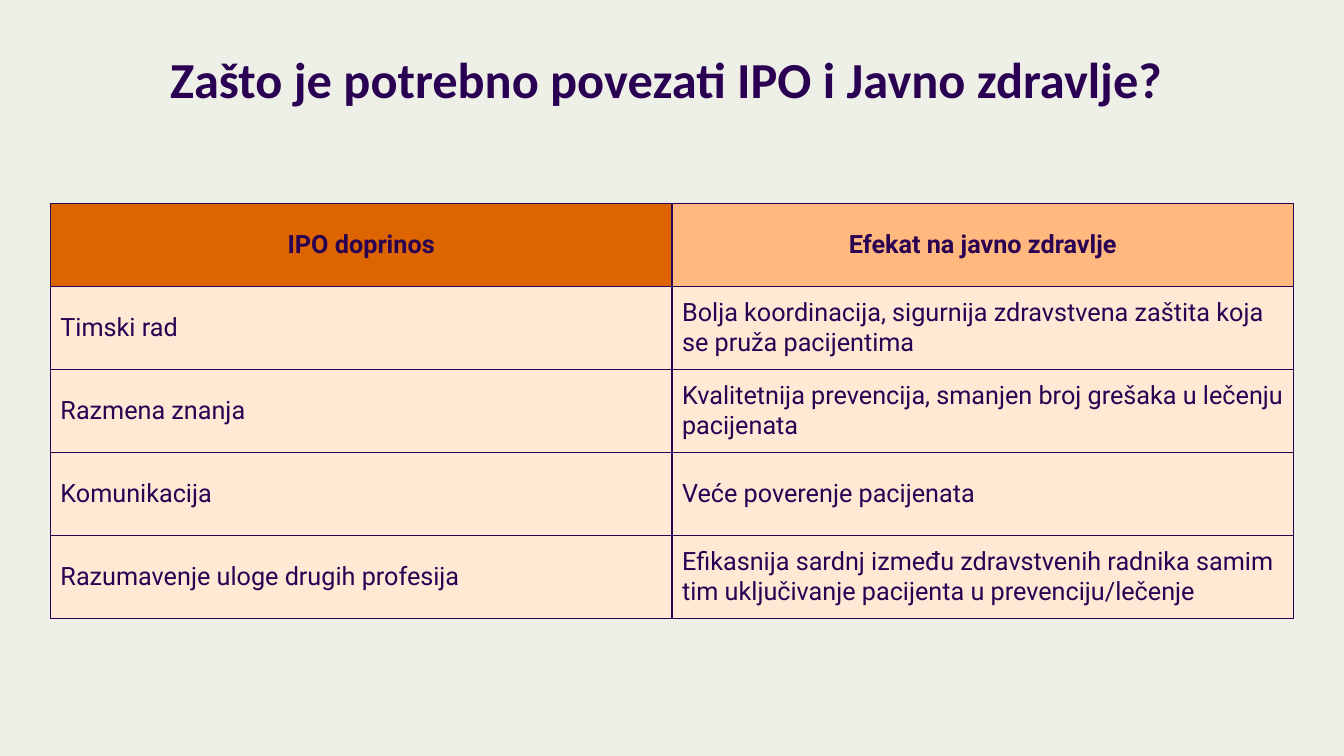
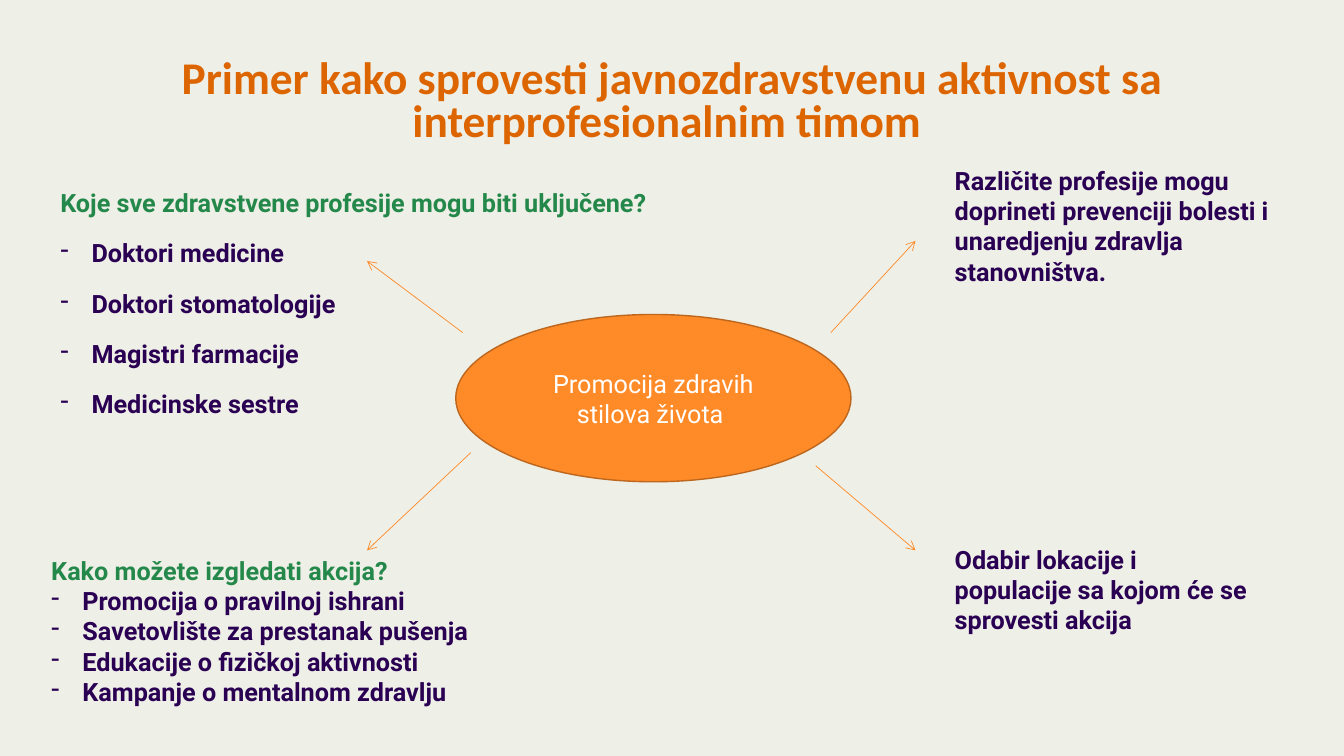
import pptx
import pptx.dml.color
import pptx.enum.shapes
import pptx.enum.text
import pptx.oxml
import pptx.oxml.ns
import pptx.util
from lxml import etree

Inches = pptx.util.Inches
Pt = pptx.util.Pt
RGBColor = pptx.dml.color.RGBColor
PP_ALIGN = pptx.enum.text.PP_ALIGN
MSO_ANCHOR = pptx.enum.text.MSO_ANCHOR
MSO_AUTO_SIZE = pptx.enum.text.MSO_AUTO_SIZE
qn = pptx.oxml.ns.qn

PAPER = RGBColor(0xEE, 0xEF, 0xE7)
INK = RGBColor(0x2A, 0x00, 0x53)
RUST = RGBColor(0xDD, 0x65, 0x00)
PEACH = RGBColor(0xFF, 0xB9, 0x7E)
CREAM = RGBColor(0xFF, 0xE8, 0xD4)
GREEN = RGBColor(0x25, 0x88, 0x4B)
ORANGE = RGBColor(0xFF, 0x8A, 0x28)
BROWN = RGBColor(0xBD, 0x66, 0x1E)
WHITE = RGBColor(0xFF, 0xFF, 0xFF)

TITLE_FONT = "Calibri"
BODY_FONT = "Roboto"
BODY_SIZE = 18
BULLET_INDENT = 0.31

TITLE_BOX = (0.5, 0.54, 12.33, 1)
TABLE_BOX = (0.5, 2.02, 12.33, 4.12)
PROFESSIONS_BOX = (0.5, 1.75, 12.33, 5.25)
TOPIC_BOX = (4.52, 3.12, 3.92, 1.66)
CAMPAIGN_BOX = (0.41, 5.46, 5.71, 1.62)
PREVENTION_BOX = (9.37, 1.59, 3.82, 1.31)
LOCATION_BOX = (9.37, 5.35, 3.14, 1.01)

CONTRIBUTIONS = [
    ("IPO doprinos", "Efekat na javno zdravlje"),
    ("Timski rad",
     "Bolja koordinacija, sigurnija zdravstvena zaštita koja se pruža pacijentima"),
    ("Razmena znanja",
     "Kvalitetnija prevencija, smanjen broj grešaka u lečenju pacijenata"),
    ("Komunikacija", "Veće poverenje pacijenata"),
    ("Razumavenje uloge drugih profesija",
     "Efikasnija sardnj između zdravstvenih radnika samim tim "
     "uključivanje pacijenta u prevenciju/lečenje"),
]
PROFESSIONS = ["Doktori medicine", "Doktori stomatologije",
               "Magistri farmacije", "Medicinske sestre"]
CAMPAIGNS = ["Promocija o pravilnoj ishrani", "Savetovlište za prestanak pušenja",
             "Edukacije o fizičkoj aktivnosti", "Kampanje o mentalnom zdravlju"]
ARROWS = [
    ((8.24, 3.3), (9.08, 2.39)),
    ((4.59, 3.3), (3.64, 2.59)),
    ((8.09, 4.62), (9.08, 5.46)),
    ((4.67, 4.49), (3.64, 5.46)),
]


def inches(values):
    return [Inches(value) for value in values]


def write(paragraph, text, color, bold=True, font=BODY_FONT, size=BODY_SIZE, **layout):
    """Add one run; layout holds paragraph attributes such as alignment."""
    for name, value in layout.items():
        setattr(paragraph, name, value)
    run = paragraph.add_run()
    run.text = text
    run.font.color.rgb = color
    for name, value in {"name": font, "size": Pt(size), "bold": bold}.items():
        setattr(run.font, name, value)


def add_dash(paragraph):
    properties = paragraph._p.get_or_add_pPr()
    properties.set("marL", str(Inches(BULLET_INDENT)))
    properties.set("indent", str(-Inches(BULLET_INDENT)))
    etree.SubElement(properties, qn("a:buChar")).set("char", "-")


def add_titled_slide(prs, text, color, size):
    slide = prs.slides.add_slide(prs.slide_layouts[5])
    title = slide.shapes.title
    title.left, title.top, title.width, title.height = inches(TITLE_BOX)
    frame = title.text_frame
    frame.word_wrap = True
    frame.auto_size = MSO_AUTO_SIZE.NONE
    frame.vertical_anchor = MSO_ANCHOR.TOP
    write(frame.paragraphs[0], text, color, font=TITLE_FONT, size=size,
          alignment=PP_ALIGN.CENTER, line_spacing=0.8)
    return slide


def add_cell_borders(cell, color, width):
    properties = cell._tc.get_or_add_tcPr()
    for side in ("lnL", "lnR", "lnT", "lnB"):
        border = etree.SubElement(properties, qn(f"a:{side}"), w=str(Pt(width)))
        fill = etree.SubElement(border, qn("a:solidFill"))
        etree.SubElement(fill, qn("a:srgbClr"), val=str(color))


def add_contribution_table(slide, box, rows):
    table = slide.shapes.add_table(len(rows), len(rows[0]), *inches(box)).table
    for row_index, row in enumerate(rows):
        header = row_index == 0
        fills = (RUST, PEACH) if header else (CREAM, CREAM)
        for column_index, (text, fill) in enumerate(zip(row, fills)):
            cell = table.cell(row_index, column_index)
            add_cell_borders(cell, INK, 1)
            cell.fill.solid()
            cell.fill.fore_color.rgb = fill
            cell.vertical_anchor = MSO_ANCHOR.MIDDLE
            write(cell.text_frame.paragraphs[0], text, INK, bold=header,
                  alignment=PP_ALIGN.CENTER if header else PP_ALIGN.LEFT)


def add_note(slide, box, lead, color, items=(), line_spacing=None, gap=0, grow=True):
    """Place a bold lead line with optional dashed items below it."""
    frame = slide.shapes.add_textbox(*inches(box)).text_frame
    frame.word_wrap = True
    frame.auto_size = MSO_AUTO_SIZE.SHAPE_TO_FIT_TEXT if grow else MSO_AUTO_SIZE.NONE
    write(frame.paragraphs[0], lead, color, line_spacing=line_spacing)
    for item in items:
        paragraph = frame.add_paragraph()
        add_dash(paragraph)
        write(paragraph, item, INK, line_spacing=line_spacing, space_before=Pt(gap))


def add_topic(slide, box, text):
    topic = slide.shapes.add_shape(pptx.enum.shapes.MSO_SHAPE.OVAL, *inches(box))
    topic.shadow.inherit = False
    topic.fill.solid()
    topic.fill.fore_color.rgb = ORANGE
    topic.line.color.rgb = BROWN
    topic.line.width = Pt(1)
    topic.text_frame.word_wrap = True
    topic.text_frame.vertical_anchor = MSO_ANCHOR.MIDDLE
    write(topic.text_frame.paragraphs[0], text, WHITE, bold=False,
          alignment=PP_ALIGN.CENTER)


def add_arrow(slide, start, end):
    arrow = slide.shapes.add_connector(
        pptx.enum.shapes.MSO_CONNECTOR.STRAIGHT, *inches(start + end))
    arrow.line.color.rgb = ORANGE
    arrow.line.width = Pt(0.5)
    etree.SubElement(arrow.line._get_or_add_ln(), qn("a:tailEnd"), type="arrow")
    etree.SubElement(arrow._element.spPr, qn("a:effectLst"))


def build_reasons_slide(prs):
    slide = add_titled_slide(
        prs, "Zašto je potrebno povezati IPO i Javno zdravlje? ", INK, 36)
    add_contribution_table(slide, TABLE_BOX, CONTRIBUTIONS)


def build_example_slide(prs):
    slide = add_titled_slide(
        prs, "Primer kako sprovesti javnozdravstvenu aktivnost sa "
        "interprofesionalnim timom ", RUST, 32.4)
    add_note(slide, PROFESSIONS_BOX, "Koje sve zdravstvene profesije mogu biti uključene?",
             GREEN, PROFESSIONS, line_spacing=1.2, gap=10, grow=False)
    add_topic(slide, TOPIC_BOX, "Promocija zdravih stilova života ")
    for start, end in ARROWS:
        add_arrow(slide, start, end)
    add_note(slide, CAMPAIGN_BOX, "Kako možete izgledati akcija?", GREEN, CAMPAIGNS)
    add_note(slide, PREVENTION_BOX, "Različite profesije mogu doprineti prevenciji "
             "bolesti i unaredjenju zdravlja stanovništva.", INK)
    add_note(slide, LOCATION_BOX, "Odabir lokacije i populacije sa kojom će se "
             "sprovesti akcija", INK)


def main():
    prs = pptx.Presentation()
    prs.slide_width, prs.slide_height = inches((13.33, 7.5))
    background = prs.slide_master.background.fill
    background.solid()
    background.fore_color.rgb = PAPER
    build_reasons_slide(prs)
    build_example_slide(prs)
    prs.save("out.pptx")


if __name__ == "__main__":
    main()
